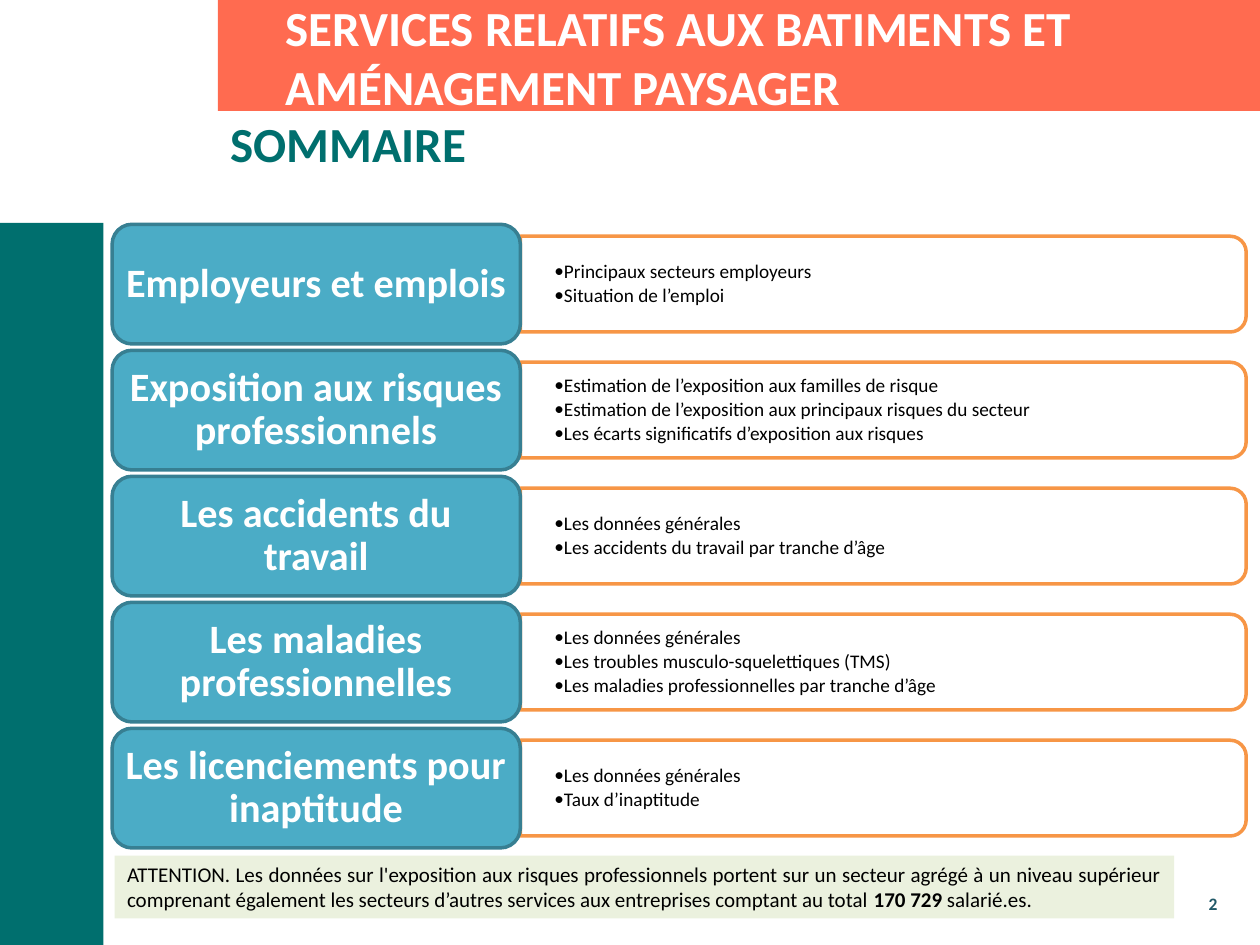
from lxml import etree
from pptx import Presentation
from pptx.dml.color import RGBColor
from pptx.enum.shapes import MSO_SHAPE as Shape
from pptx.enum.text import MSO_ANCHOR as Anchor, PP_ALIGN as Align
from pptx.oxml.ns import qn
from pptx.util import Inches, Pt

FONT = "Calibri"
COLORS = {
    "coral": "FF6B50", "teal": "006F6E", "blue": "4BACC6", "dark_blue": "377F92",
    "orange": "F79646", "pale_green": "EBF1DE", "number": "215968",
    "white": "FFFFFF", "black": "000000",
}
SECTIONS = [
    ("Employeurs et emplois",
     ["Principaux secteurs employeurs", "Situation de l’emploi"]),
    ("Exposition aux risques professionnels",
     ["Estimation de l’exposition aux familles de risque",
      "Estimation de l’exposition aux principaux risques du secteur",
      "Les écarts significatifs d’exposition aux risques"]),
    ("Les accidents du travail",
     ["Les données générales", "Les accidents du travail par tranche d’âge"]),
    ("Les maladies professionnelles",
     ["Les données générales", "Les troubles musculo-squelettiques (TMS)",
      "Les maladies professionnelles par tranche d’âge"]),
    ("Les licenciements pour inaptitude",
     ["Les données générales", "Taux d’inaptitude"]),
]
NOTICE = [
    ("ATTENTION. Les données sur l'exposition aux risques professionnels portent sur "
     "un secteur agrégé à un niveau supérieur comprenant également les secteurs "
     "d’autres services aux entreprises comptant au total ", False),
    ("170 729", True),
    (" salarié.es.", False),
]


def color(name):
    """Return the palette colour with this name."""
    return RGBColor.from_string(COLORS[name])


def style_font(font, size, name, bold=False):
    """Set typeface, size, colour and weight."""
    font.name, font.size, font.bold = FONT, Pt(size), bold
    font.color.rgb = color(name)


def add_block(slide, kind, box, fill, line=None):
    """Add a filled preset shape, outlined if a line colour is given."""
    shape = slide.shapes.add_shape(kind, *map(Inches, box))
    shape.shadow.inherit = False
    shape.fill.solid()
    shape.fill.fore_color.rgb = color(fill)
    if line:
        shape.line.color.rgb = color(line)
        shape.line.width = Pt(2)
    else:
        shape.line.fill.background()
    return shape


def set_insets(frame, horizontal, vertical):
    """Set equal side insets and equal top and bottom insets."""
    frame.margin_left = frame.margin_right = Inches(horizontal)
    frame.margin_top = frame.margin_bottom = Inches(vertical)


def add_text(slide, box, text, size, name, bold=True):
    """Add a wrapping text box with one line of text per paragraph."""
    text_box = slide.shapes.add_textbox(*map(Inches, box))
    frame = text_box.text_frame
    frame.word_wrap = True
    frame.text = text
    for paragraph in frame.paragraphs:
        for run in paragraph.runs:
            style_font(run.font, size, name, bold)
    return frame


def add_bullet(paragraph):
    """Give the paragraph a hanging bullet."""
    properties = paragraph._p.get_or_add_pPr()
    properties.set("marL", str(Inches(0.06)))
    properties.set("indent", str(-Inches(0.06)))
    etree.SubElement(properties, qn("a:buFont")).set("typeface", FONT)
    etree.SubElement(properties, qn("a:buChar")).set("char", "•")


def add_slide_number(slide, box):
    """Add the right-aligned slide number."""
    frame = add_text(slide, box, "2", 10, "number")
    frame.paragraphs[0].alignment = Align.RIGHT


def add_panel(slide, box, items):
    """Add an outlined panel, rounded on the right, with its bullet list."""
    left, top, width, height = box
    upright = (left + (width - height) / 2, top + (height - width) / 2, height, width)
    panel = add_block(slide, Shape.ROUND_2_SAME_RECTANGLE, upright, "white", "orange")
    panel.rotation = 90
    text_area = (left, top + 0.04, width - 0.04, height - 0.08)
    frame = add_text(slide, text_area, "\n".join(items), 11, "black", False)
    frame.vertical_anchor = Anchor.MIDDLE
    set_insets(frame, 0.27, 0.14)
    for paragraph in frame.paragraphs:
        paragraph.level = 1
        add_bullet(paragraph)
        paragraph.line_spacing = 0.9
        paragraph.space_after = Pt(1.65)


def add_label(slide, box, text):
    """Add the rounded section label."""
    label = add_block(slide, Shape.ROUNDED_RECTANGLE, box, "blue", "dark_blue")
    frame = label.text_frame
    frame.word_wrap = True
    frame.text = text
    frame.vertical_anchor = Anchor.MIDDLE
    set_insets(frame, 0.05, 0.05)
    paragraph = frame.paragraphs[0]
    paragraph.alignment = Align.CENTER
    paragraph.line_spacing = 0.9
    style_font(paragraph.runs[0].font, 23, "white", True)


def add_contents(slide, box):
    """Stack the sections at equal steps inside the box."""
    left, top, width, height = box
    label_width, label_height, panel_height = 3.24, 0.95, 0.76
    step = (height - label_height) / (len(SECTIONS) - 1)
    for index, (title, items) in enumerate(SECTIONS):
        row_top = top + index * step
        panel_top = row_top + (label_height - panel_height) / 2
        add_panel(slide, (left + label_width, panel_top, width - label_width,
                          panel_height), items)
        add_label(slide, (left, row_top, label_width, label_height), title)


def add_notice(slide, box):
    """Add the justified warning on its tinted band."""
    frame = add_block(slide, Shape.RECTANGLE, box, "pale_green").text_frame
    frame.word_wrap = True
    frame.vertical_anchor = Anchor.TOP
    paragraph = frame.paragraphs[0]
    paragraph.alignment = Align.JUSTIFY
    for text, bold in NOTICE:
        run = paragraph.add_run()
        run.text = text
        style_font(run.font, 12, "black", bold)


def add_header(slide, box):
    """Add the banner with the sector title and the heading below it."""
    left, top, width, height = box
    add_block(slide, Shape.RECTANGLE, box, "coral")
    add_text(slide, (left, top + height - 0.03, width, 0.85), "SOMMAIRE", 28, "teal")
    add_text(slide, (left + 0.44, top - 0.07, width - 0.54, 1.04),
             "SERVICES RELATIFS AUX BATIMENTS ET AMÉNAGEMENT PAYSAGER", 28, "white")


def main():
    """Build and save the contents slide."""
    presentation = Presentation()
    presentation.slide_width, presentation.slide_height = Inches(10), Inches(7.5)
    slide = presentation.slides.add_slide(presentation.slide_layouts[6])
    add_header(slide, (1.73, 0, 8.27, 0.88))
    add_block(slide, Shape.RECTANGLE, (0, 1.77, 0.82, 5.73), "teal")
    add_contents(slide, (0.89, 1.78, 9, 4.95))
    add_notice(slide, (0.91, 6.79, 8.41, 0.5))
    add_slide_number(slide, (8.74, 7.04, 1.02, 0.32))
    presentation.save("out.pptx")


if __name__ == "__main__":
    main()
